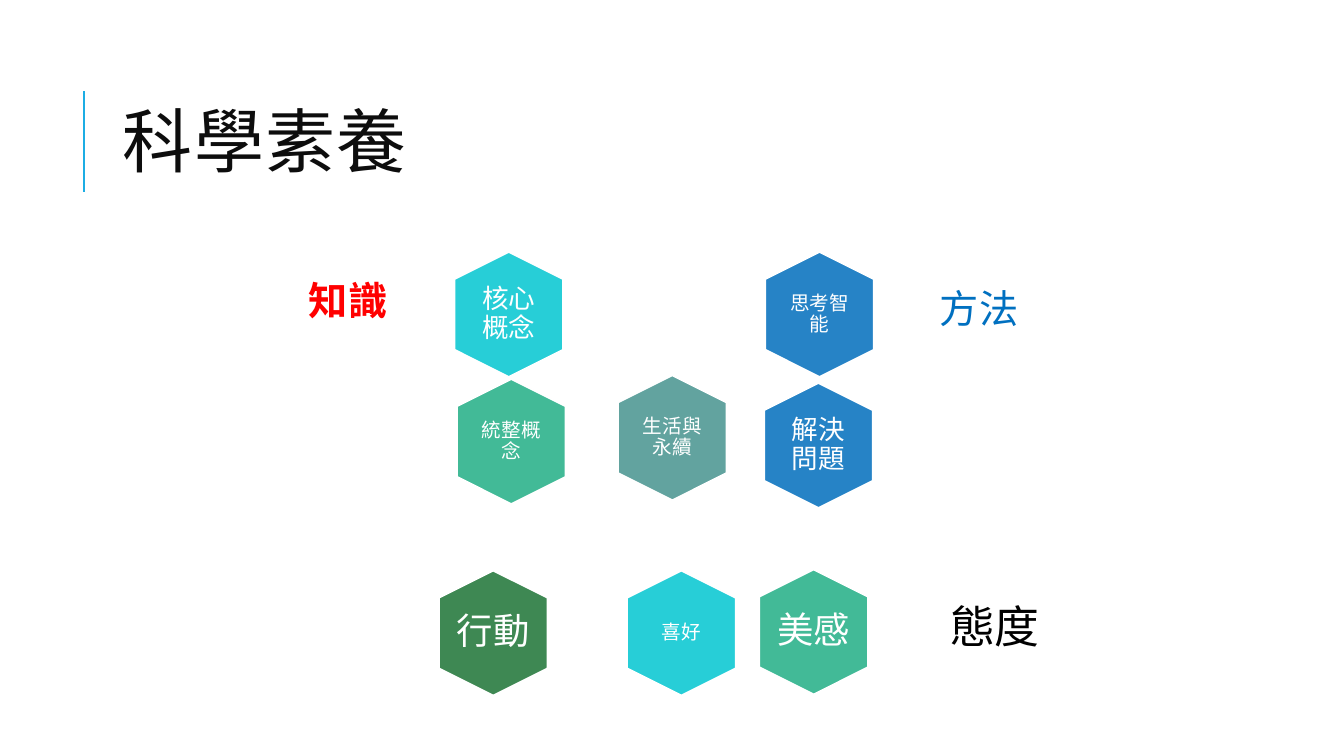
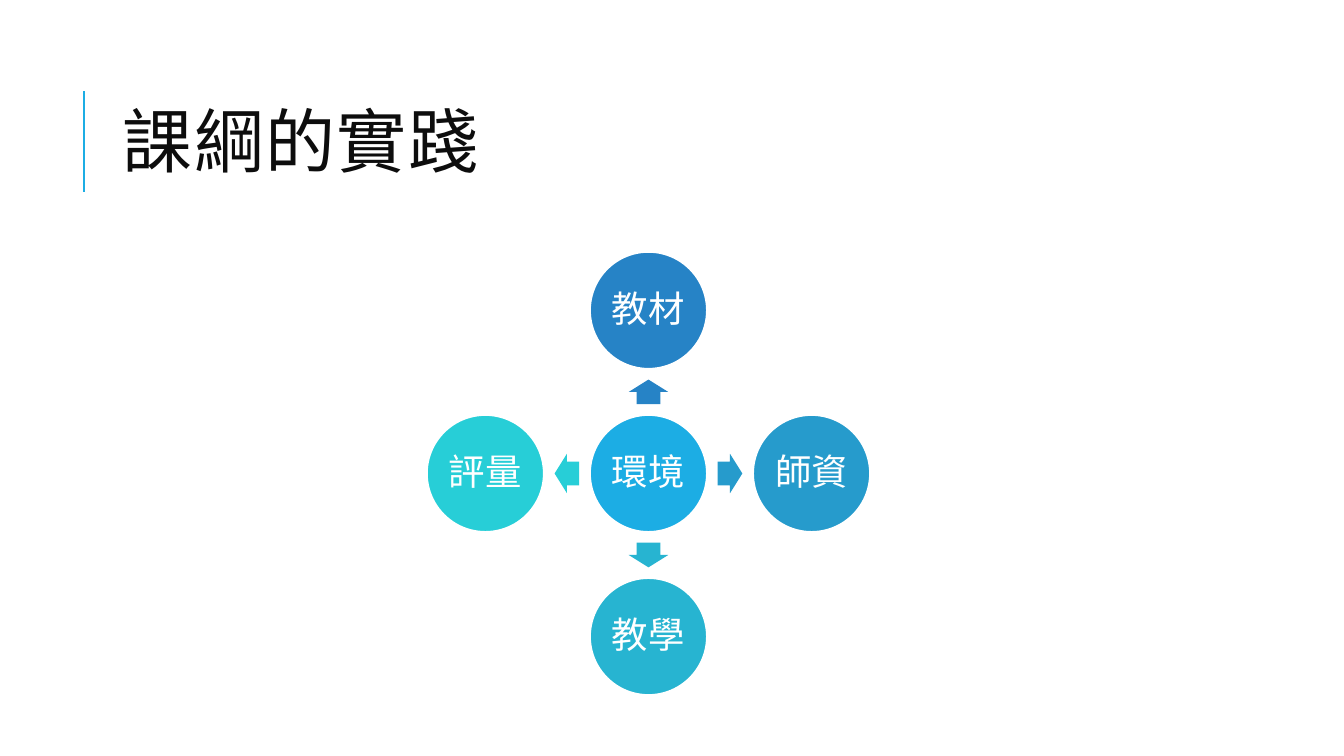
import dataclasses

import lxml.etree
import pptx
import pptx.dml.color
import pptx.enum.shapes
import pptx.enum.text
import pptx.oxml.ns
import pptx.util

Pt = pptx.util.Pt
Color = pptx.dml.color.RGBColor.from_string
Shape = pptx.enum.shapes.MSO_SHAPE
Align = pptx.enum.text.PP_ALIGN


@dataclasses.dataclass(frozen=True)
class Theme:
    title_font: str = "Cabin"
    body_font: str = "Calibri"
    asian_font: str = "Noto Sans CJK SC"
    ink: str = "0D0D0D"
    black: str = "000000"
    white: str = "FFFFFF"
    red: str = "FF0000"
    label_blue: str = "0070C0"
    sky: str = "1CADE4"
    blue: str = "2683C6"
    ocean: str = "269BCC"
    lagoon: str = "27B4D1"
    turquoise: str = "27CED7"
    mint: str = "42BA97"
    green: str = "3E8853"
    sage: str = "62A39F"
    title_size: float = 50
    attitude_size: float = 32
    label_size: float = 28
    large_size: float = 26
    medium_size: float = 19
    small_size: float = 14
    outline: float = 1.25
    rule: float = 1.5


theme = Theme()


def write_text(shape, text, size, color=theme.white, font=theme.body_font, bold=False,
               align=Align.CENTER, inset=0, line_spacing=0.9):
    """Fill a shape with one vertically centred paragraph and return its run properties."""
    frame = shape.text_frame
    frame.text = text
    frame_format = {
        "word_wrap": True,
        "auto_size": pptx.enum.text.MSO_AUTO_SIZE.NONE,
        "vertical_anchor": pptx.enum.text.MSO_ANCHOR.MIDDLE,
    }
    for side in ("left", "top", "right", "bottom"):
        frame_format[f"margin_{side}"] = Pt(inset)
    for name, value in frame_format.items():
        setattr(frame, name, value)
    paragraph = frame.paragraphs[0]
    paragraph.alignment = align
    paragraph.line_spacing = line_spacing
    run = paragraph.runs[0]
    for name, value in {"name": font, "size": Pt(size), "bold": bold}.items():
        setattr(run.font, name, value)
    run.font.color.rgb = Color(color)
    properties = run._r.get_or_add_rPr()
    asian = lxml.etree.SubElement(properties, pptx.oxml.ns.qn("a:ea"))
    asian.set("typeface", theme.asian_font)
    return properties


def add_figure(slide, kind, center, size, fill, outlined=True):
    """Add a flat preset shape placed by its centre."""
    (x, y), (width, height) = center, size
    shape = slide.shapes.add_shape(
        kind, Pt(x - width / 2), Pt(y - height / 2), Pt(width), Pt(height))
    shape.shadow.inherit = False
    shape.fill.solid()
    shape.fill.fore_color.rgb = Color(fill)
    if outlined:
        shape.line.color.rgb = Color(theme.white)
        shape.line.width = Pt(theme.outline)
    else:
        shape.line.fill.background()
    return shape


presentation = pptx.Presentation()
presentation.slide_width = Pt(960)
presentation.slide_height = Pt(540)
layout = presentation.slide_layouts[5]

# Titles
slides = []
for title_text in ("科學素養", "課綱的實踐"):
    slide = presentation.slides.add_slide(layout)
    title = slide.shapes.title
    title_box = {"left": 80.6, "top": 46.1, "width": 765.4, "height": 118.1}
    for name, value in title_box.items():
        setattr(title, name, Pt(value))
    properties = write_text(title, title_text, theme.title_size, theme.ink, theme.title_font,
                            align=Align.LEFT, inset=7.2, line_spacing=0.8)
    properties.set("spc", "100")
    slides.append(slide)
literacy_slide, practice_slide = slides

# The rule beside the title belongs to the shared layout
rule = literacy_slide.shapes.add_connector(
    pptx.enum.shapes.MSO_CONNECTOR.STRAIGHT, Pt(60), Pt(136.8), Pt(60), Pt(64.8))
rule.line.color.rgb = Color(theme.sky)
rule.line.width = Pt(theme.rule)
lxml.etree.SubElement(rule.element.spPr, pptx.oxml.ns.qn("a:effectLst"))
layout.shapes.element.append(rule.element)

# Scientific literacy: hexagons, each under an upright text box
hexagons = [
    ("思考智能", 585.4, 224.6, theme.blue, theme.small_size),
    ("核心概念", 363.4, 224.6, theme.turquoise, theme.medium_size),
    ("統整概念", 365.2, 315.4, theme.mint, theme.small_size),
    ("行動", 352.3, 452.2, theme.green, theme.large_size),
    ("生活與永續", 480.2, 312.7, theme.sage, theme.small_size),
    ("解決問題", 584.6, 318.2, theme.blue, theme.medium_size),
    ("喜好", 486.7, 452.2, theme.turquoise, theme.small_size),
    ("美感", 581.2, 451.4, theme.mint, theme.large_size),
]
text_width, text_height = 53.4, 61.2
for text, x, y, fill, size in hexagons:
    hexagon = add_figure(literacy_slide, Shape.HEXAGON, (x, y), (89.2, 77.6), fill)
    hexagon.rotation = 90
    text_box = literacy_slide.shapes.add_textbox(
        Pt(x - text_width / 2), Pt(y - text_height / 2), Pt(text_width), Pt(text_height))
    write_text(text_box, text, size, inset=4.3 if size == theme.small_size else 0)

labels = [
    ("方法", 662.4, 195.1, theme.label_size, theme.label_blue, False, Align.LEFT),
    ("知識", 211.7, 189.4, theme.label_size, theme.red, True, Align.LEFT),
    ("態度", 652.3, 422.6, theme.attitude_size, theme.black, False, Align.RIGHT),
]
for text, left, top, size, color, bold, align in labels:
    label = literacy_slide.shapes.add_textbox(Pt(left), Pt(top), Pt(99.4), Pt(53.3))
    write_text(label, text, size, color, theme.asian_font, bold, align, inset=9)

# Curriculum practice: a hub with four arrows pointing outward
hub_x, hub_y, spacing = 463.2, 338.2, 116.5
circle_size = (83.5, 83.5)
hub = add_figure(practice_slide, Shape.OVAL, (hub_x, hub_y), circle_size, theme.sky)
write_text(hub, "環境", theme.large_size, inset=2.8)
spokes = [
    ("教材", 0, -1, 270, theme.blue),
    ("師資", 1, 0, 0, theme.ocean),
    ("教學", 0, 1, 90, theme.lagoon),
    ("評量", -1, 0, 180, theme.turquoise),
]
for text, step_x, step_y, rotation, fill in spokes:
    arrow_center = (hub_x + step_x * spacing / 2, hub_y + step_y * spacing / 2)
    arrow = add_figure(practice_slide, Shape.RIGHT_ARROW, arrow_center, (17.6, 28.2), fill,
                       outlined=False)
    arrow.adjustments[0] = 0.6
    arrow.adjustments[1] = 0.5
    arrow.rotation = rotation
    circle_center = (hub_x + step_x * spacing, hub_y + step_y * spacing)
    circle = add_figure(practice_slide, Shape.OVAL, circle_center, circle_size, fill)
    write_text(circle, text, theme.large_size, inset=2.8)

presentation.save("out.pptx")
